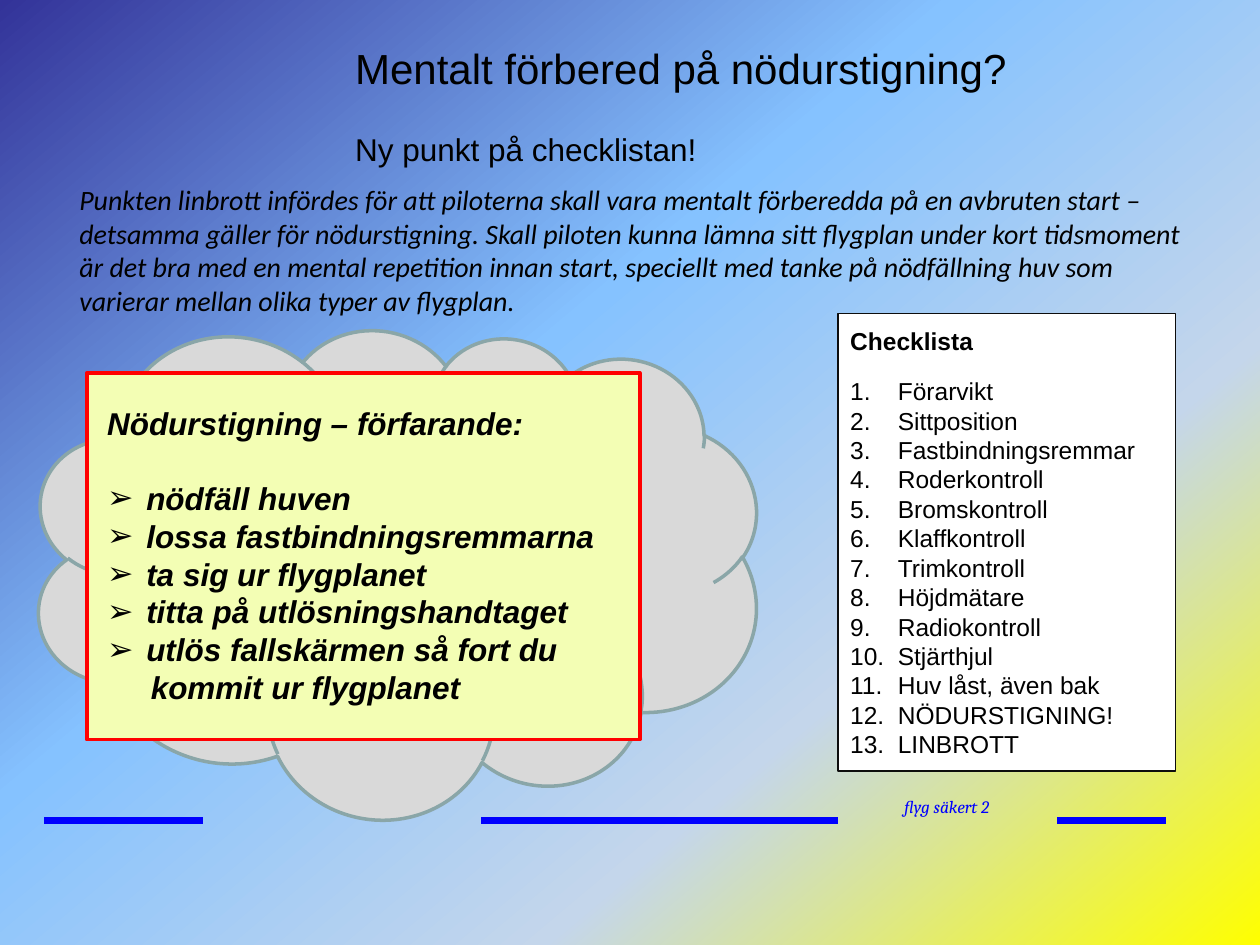
from dataclasses import dataclass

from lxml import etree
from pptx import Presentation
from pptx.dml.color import RGBColor
from pptx.enum.shapes import MSO_CONNECTOR as Connector, MSO_SHAPE as Shape
from pptx.enum.text import MSO_ANCHOR as Anchor, MSO_AUTO_SIZE as AutoSize, PP_ALIGN as Align
from pptx.oxml.ns import qn
from pptx.util import Cm, Pt


@dataclass(frozen=True)
class Theme:
    black: str = "000000"
    blue: str = "0000FF"
    cloud_fill: str = "D9D9D9"
    cloud_line: str = "8AA6A8"
    list_fill: str = "FFFFFF"
    list_line: str = "0D0D0D"
    frame_fill: str = "F3FEB4"
    frame_line: str = "FF0000"
    background: tuple = ((0, "333399"), (40, "85C2FF"), (70, "C4D6EB"), (100, "FFFF00"))
    title_size: int = 24
    heading_size: int = 18
    body_size: int = 16
    list_size: int = 14
    footer_size: int = 10


theme = Theme()


def add_paragraph(frame, text, size, font="Arial", color=theme.black, bold=False,
                  italic=False, before=0, left=0, hanging=0, bullet=None):
    """Fill the empty first paragraph or append one; bullet is a (tag, attributes) pair."""
    paragraph = frame.paragraphs[0]
    if paragraph.runs:
        paragraph = frame.add_paragraph()
    properties = paragraph._p.get_or_add_pPr()
    if left:
        properties.set("marL", str(Cm(left)))
        properties.set("indent", str(-Cm(hanging)))
    if bullet:
        etree.SubElement(properties, qn("a:buFont"), typeface="Arial")
        etree.SubElement(properties, qn(bullet[0]), bullet[1])
    if before:
        paragraph.space_before = Pt(before)
    paragraph.alignment = Align.LEFT
    run = paragraph.add_run()
    run.text = text
    run.font.size = Pt(size)
    run.font.name = font
    run.font.bold = bold
    run.font.italic = italic
    run.font.color.rgb = RGBColor.from_string(color)
    return paragraph


def add_text_frame(left, top, width, height, wrap=True, auto_size=AutoSize.SHAPE_TO_FIT_TEXT):
    box = slide.shapes.add_textbox(Cm(left), Cm(top), Cm(width), Cm(height))
    box.text_frame.word_wrap = wrap
    box.text_frame.auto_size = auto_size
    return box.text_frame


presentation = Presentation()
presentation.slide_width = Cm(25.4)
presentation.slide_height = Cm(19.05)
slide = presentation.slides.add_slide(presentation.slide_layouts[6])

# Background gradient
background = slide.background.fill
background.gradient()
background.gradient_angle = 310
stop_list = slide.background._cSld.find(".//" + qn("a:gsLst"))
for old_stop in list(stop_list):
    stop_list.remove(old_stop)
for position, color in theme.background:
    stop = etree.SubElement(stop_list, qn("a:gs"), pos=str(position * 1000))
    etree.SubElement(stop, qn("a:srgbClr"), val=color)

# Footer rule in three pieces, with its label
rule_top = Cm(16.54)
for start, end in ((0.89, 4.09), (9.7, 16.89), (21.31, 23.5)):
    rule = slide.shapes.add_connector(Connector.STRAIGHT, Cm(start), rule_top, Cm(end), rule_top)
    rule.line.color.rgb = RGBColor.from_string(theme.blue)
    rule.line.width = Pt(4.5)
    etree.SubElement(rule._element.spPr, qn("a:effectLst"))

footer = add_text_frame(17.09, 15.93, 3.99, 1.7, wrap=False, auto_size=AutoSize.NONE)
add_paragraph(footer, "flyg säkert 2", theme.footer_size, "Cambria", theme.blue,
              italic=True).alignment = Align.CENTER

# Cloud, checklist panel and procedure frame
panels = []
for preset, left, top, width, height, fill, line, weight in (
    (Shape.CLOUD, 0.69, 6.48, 14.61, 10.03, theme.cloud_fill, theme.cloud_line, 2),
    (Shape.RECTANGLE, 16.89, 6.32, 6.81, 9.22, theme.list_fill, theme.list_line, 1),
    (Shape.RECTANGLE, 1.75, 7.52, 11.15, 7.39, theme.frame_fill, theme.frame_line, 2),
):
    panel = slide.shapes.add_shape(preset, Cm(left), Cm(top), Cm(width), Cm(height))
    panel.shadow.inherit = False
    panel.fill.solid()
    panel.fill.fore_color.rgb = RGBColor.from_string(fill)
    panel.line.color.rgb = RGBColor.from_string(line)
    panel.line.width = Pt(weight)
    panels.append(panel)
cloud, checklist_panel, procedure_frame = panels
cloud.rotation = 9.7

# Title and introduction
title = add_text_frame(6.91, 0.74, 13.79, 2.82, wrap=False)
add_paragraph(title, "Mentalt förbered på nödurstigning?", theme.title_size)
add_paragraph(title, "Ny punkt på checklistan!", theme.heading_size, before=21)

introduction = add_text_frame(1.35, 3.56, 23.14, 3)
add_paragraph(
    introduction,
    "Punkten linbrott infördes för att piloterna skall vara mentalt förberedda på en avbruten "
    "start – detsamma gäller för nödurstigning. Skall piloten kunna lämna sitt flygplan under "
    "kort tidsmoment är det bra med en mental repetition innan start, speciellt med tanke på "
    "nödfällning huv som varierar mellan olika typer av flygplan.",
    theme.body_size, "Calibri", italic=True)

# Checklist
checklist = checklist_panel.text_frame
checklist.word_wrap = True
checklist.vertical_anchor = Anchor.MIDDLE
add_paragraph(checklist, "Checklista", theme.list_size, bold=True)
checks = (
    "Förarvikt", "Sittposition", "Fastbindningsremmar", "Roderkontroll", "Bromskontroll",
    "Klaffkontroll", "Trimkontroll", "Höjdmätare", "Radiokontroll", "Stjärthjul",
    "Huv låst, även bak", "NÖDURSTIGNING!", "LINBROTT",
)
for index, check in enumerate(checks):
    add_paragraph(checklist, check, theme.list_size, before=0 if index else 12,
                  left=0.96, hanging=0.96, bullet=("a:buAutoNum", {"type": "arabicPeriod"}))

# Procedure
procedure = add_text_frame(1.91, 8.03, 10.8, 6.4)
add_paragraph(procedure, "Nödurstigning – förfarande:", theme.heading_size, bold=True, italic=True)
steps = (
    "nödfäll huven", "lossa fastbindningsremmarna", "ta sig ur flygplanet",
    "titta på utlösningshandtaget", "utlös fallskärmen så fort du",
)
for index, step in enumerate(steps):
    add_paragraph(procedure, step, theme.heading_size, bold=True, italic=True,
                  before=0 if index else 21, left=0.79, hanging=0.79,
                  bullet=("a:buChar", {"char": "➢"}))
add_paragraph(procedure, "kommit ur flygplanet", theme.heading_size, bold=True, italic=True,
              left=0.88)

presentation.save("out.pptx")
